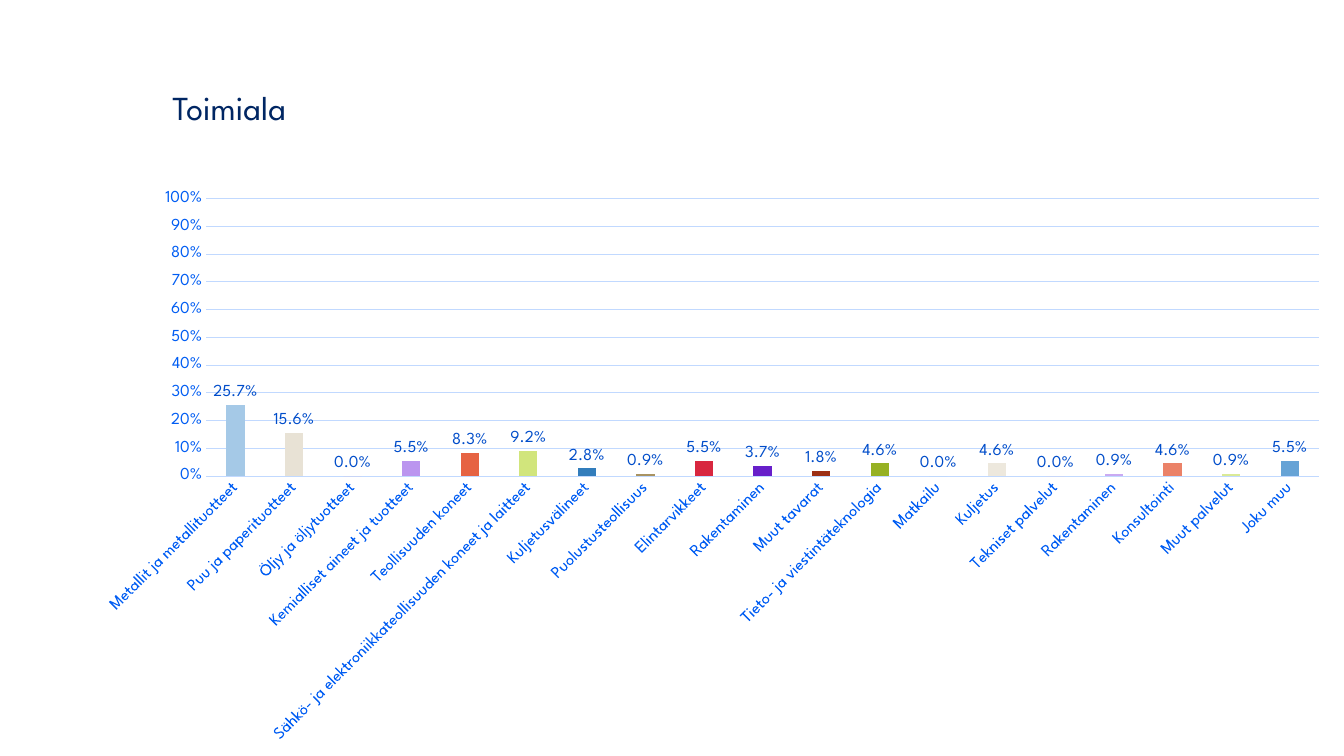
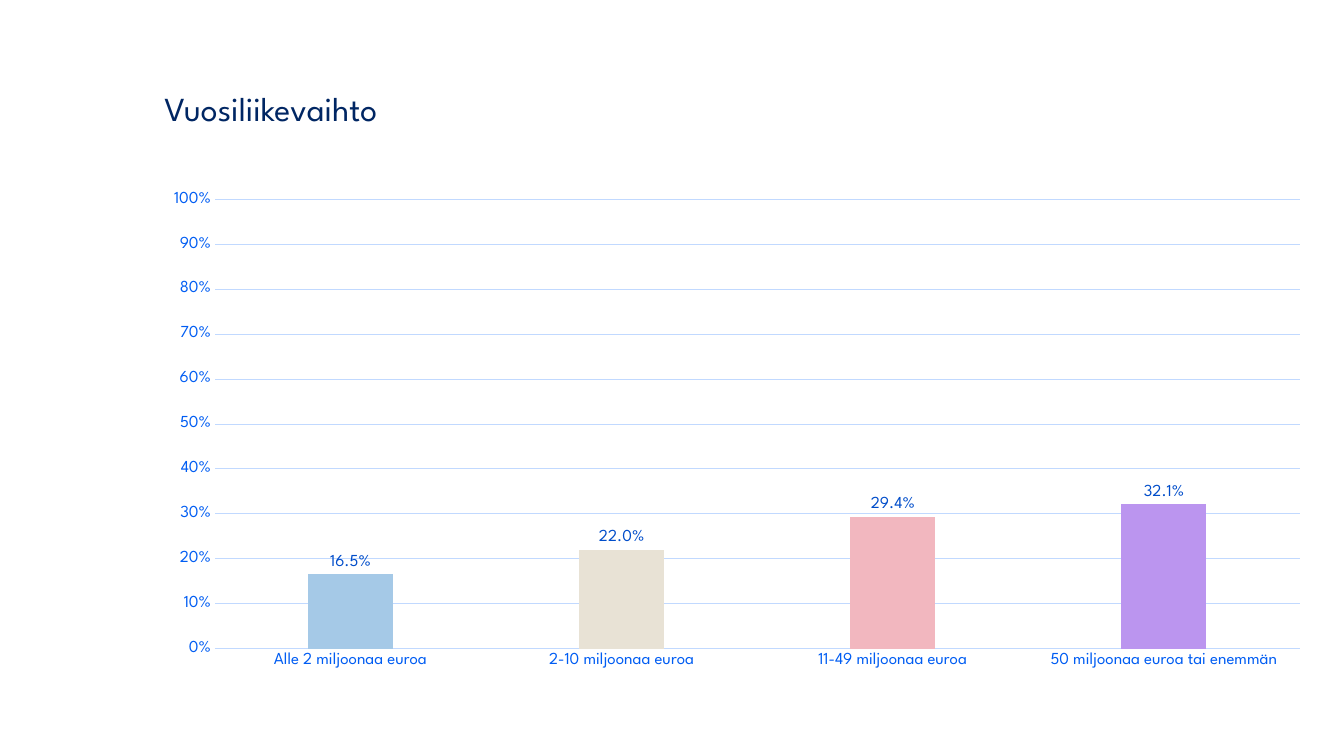
from lxml import etree
from pptx import Presentation, util as u
from pptx.chart.data import CategoryChartData
from pptx.dml.color import RGBColor
from pptx.enum import chart as ch, text as t
from pptx.oxml import ns

FACE = "League Spartan"
NAVY = RGBColor(0x00, 0x26, 0x63)
BLUE = RGBColor(0x00, 0x5D, 0xF3)
DEEP = RGBColor(0x00, 0x4D, 0xCA)
PALE = RGBColor(0xC1, 0xD9, 0xFF)
HUES = [RGBColor.from_string(h) for h in (
    "A5C9E7 E8E2D5 F2B7BF BB95EF E66342 D1E57C 327DBC A99362 D8273F 671FCA "
    "9D3015 96B123 B7D4EC EDE8DD F5C5CC C9AAF2 EB8268 DAEA96 66A3D6").split()]

FIELDS = [
    ("Metallit ja metallituotteet", 0.257),
    ("Puu ja paperituotteet", 0.156),
    ("Öljy ja öljytuotteet", 0),
    ("Kemialliset aineet ja tuotteet", 0.055),
    ("Teollisuuden koneet", 0.083),
    ("Sähkö- ja elektroniikkateollisuuden koneet ja laitteet", 0.092),
    ("Kuljetusvälineet", 0.028),
    ("Puolustusteollisuus", 0.009),
    ("Elintarvikkeet", 0.055),
    ("Rakentaminen", 0.037),
    ("Muut tavarat", 0.018),
    ("Tieto- ja viestintäteknologia", 0.046),
    ("Matkailu", 0),
    ("Kuljetus", 0.046),
    ("Tekniset palvelut", 0),
    ("Rakentaminen", 0.009),
    ("Konsultointi", 0.046),
    ("Muut palvelut", 0.009),
    ("Joku muu", 0.055),
]
SALES = [
    ("Alle 2 miljoonaa euroa", 0.165),
    ("2-10 miljoonaa euroa", 0.22),
    ("11-49 miljoonaa euroa", 0.294),
    ("50 miljoonaa euroa tai enemmän", 0.321),
]


def ink(font, size, color):
    """Set the shared face with a size and a colour."""
    font.name, font.size = FACE, u.Pt(size)
    font.color.rgb = color


def write(frame, text, size=24, color=NAVY, align=t.PP_ALIGN.LEFT, lead=0.9):
    """Fill a text frame with one formatted paragraph."""
    para = frame.paragraphs[0]
    para.alignment, para.line_spacing = align, lead
    run = para.add_run()
    run.text = text
    ink(run.font, size, color)


def rule(line):
    """Draw a line as a thin pale rule."""
    line.color.rgb, line.width = PALE, u.Pt(0.75)


def frame_plot(chart, area):
    """Fix the inner plot area, given as shares of the chart."""
    plot = chart._chartSpace.chart.plotArea
    for old in plot.findall(ns.qn("c:layout")):
        plot.remove(old)
    layout = etree.Element(ns.qn("c:layout"))
    manual = etree.SubElement(layout, ns.qn("c:manualLayout"))
    parts = [("layoutTarget", "inner"), ("xMode", "edge"), ("yMode", "edge")]
    for tag, val in parts + list(zip("xywh", area)):
        etree.SubElement(manual, ns.qn("c:" + tag)).set("val", str(val))
    plot.insert(0, layout)


class Deck:
    """Hold the style and the current slide; places are percent of its size."""

    def __init__(self):
        """Open a wide presentation."""
        self.prs = Presentation()
        self.prs.slide_width, self.prs.slide_height = u.Inches(13.333), u.Inches(7.5)

    def box(self, *place):
        """Turn percent of the slide into lengths."""
        sides = (self.prs.slide_width, self.prs.slide_height) * 2
        return [int(side * part / 100) for side, part in zip(sides, place)]

    def page(self, text, left, top):
        """Start a slide with its title."""
        self.slide = self.prs.slides.add_slide(self.prs.slide_layouts[5])
        title = self.slide.shapes.title
        title.left, title.top, title.width, title.height = self.box(left, top, 82.05, 19.33)
        frame = title.text_frame
        frame.auto_size = t.MSO_AUTO_SIZE.NONE
        frame.vertical_anchor = t.MSO_ANCHOR.MIDDLE
        write(frame, text)

    def bars(self, rows, place, area, tilt=0):
        """Add a column chart with one colour per column."""
        names, vals = zip(*rows)
        data = CategoryChartData(number_format="0.0%")
        data.categories = names
        data.add_series("Series 1", vals)
        chart = self.slide.shapes.add_chart(
            ch.XL_CHART_TYPE.COLUMN_CLUSTERED, *self.box(*place), data).chart
        chart.has_title = chart.has_legend = False
        ink(chart.font, 10, NAVY)
        frame_plot(chart, area)
        self.axes(chart, tilt)
        plot = chart.plots[0]
        plot.gap_width, plot.overlap, plot.vary_by_categories = 219, -27, False
        series = plot.series[0]
        series.invert_if_negative = False
        for i, hue in enumerate(HUES[:len(rows)]):
            fill = series.points[i].format.fill
            fill.solid()
            fill.fore_color.rgb = hue
        plot.has_data_labels = True
        labels = plot.data_labels
        labels.show_value = True
        labels.number_format, labels.number_format_is_linked = "0.0%", False
        labels.position = ch.XL_LABEL_POSITION.OUTSIDE_END
        ink(labels.font, 12, DEEP)

    def axes(self, chart, tilt):
        """Style both axes and the grid."""
        cat, val = chart.category_axis, chart.value_axis
        for axis in (cat, val):
            axis.major_tick_mark = axis.minor_tick_mark = ch.XL_TICK_MARK.NONE
            ink(axis.tick_labels.font, 12, BLUE)
        rule(cat.format.line)
        if tilt:
            body = cat._element.find(ns.qn("c:txPr")).find(ns.qn("a:bodyPr"))
            body.set("rot", str(tilt * 60000))
            body.set("vert", "horz")
        val.minimum_scale, val.maximum_scale, val.major_unit = 0, 1, 0.1
        val.tick_labels.number_format = "0%"
        val.tick_labels.number_format_is_linked = False
        val.format.line.fill.background()
        val.has_major_gridlines = True
        rule(val.major_gridlines.format.line)


def main():
    """Build and save both slides."""
    deck = Deck()
    deck.page("Toimiala", 12.08, 4.8)
    deck.bars(FIELDS, (8.03, 24.93, 90.15, 79.6), (0.099, 0.017, 0.921, 0.461), tilt=-45)
    deck.page("Vuosiliikevaihto", 11.48, 4.93)
    deck.bars(SALES, (10.35, 22.4, 88.2, 67.6), (0.064, 0.059, 0.915, 0.879))
    deck.prs.save("out.pptx")


if __name__ == "__main__":
    main()
